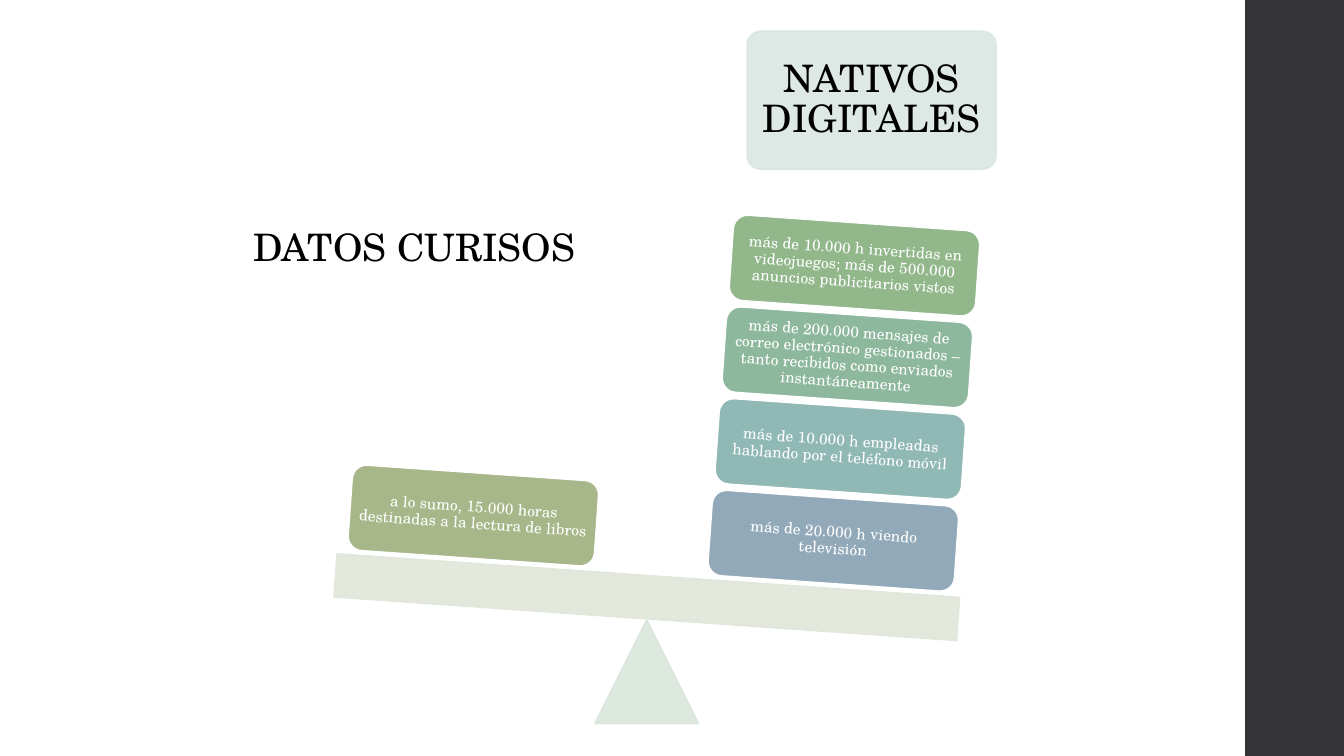
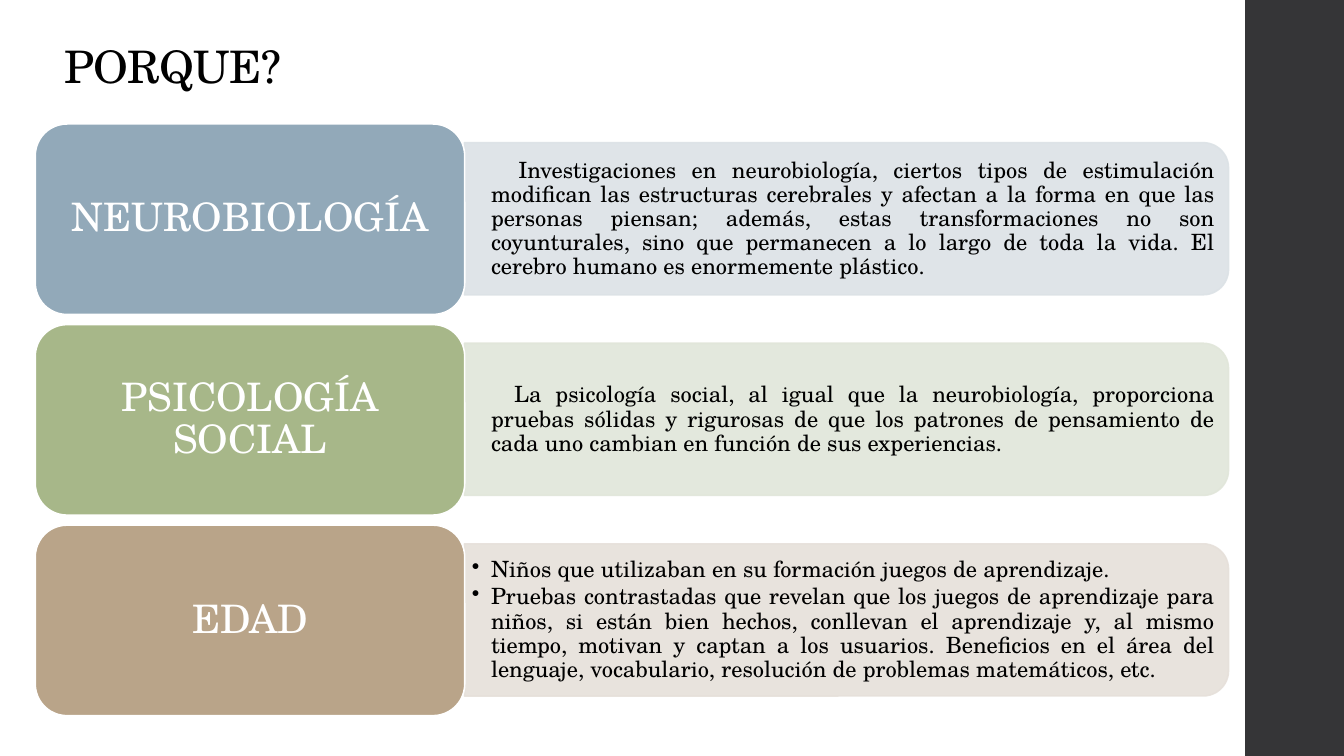
from dataclasses import dataclass
from typing import NamedTuple

from lxml import etree
from pptx import Presentation
from pptx.dml.color import RGBColor
from pptx.enum.shapes import MSO_SHAPE
from pptx.enum.text import MSO_ANCHOR, PP_ALIGN
from pptx.oxml.ns import qn
from pptx.util import Emu, Pt

RECTANGLE = MSO_SHAPE.RECTANGLE
ROUNDED = MSO_SHAPE.ROUNDED_RECTANGLE
ROUNDED_TOP = MSO_SHAPE.ROUND_2_SAME_RECTANGLE
TRIANGLE = MSO_SHAPE.ISOSCELES_TRIANGLE
CENTER, LEFT, JUSTIFY = PP_ALIGN.CENTER, PP_ALIGN.LEFT, PP_ALIGN.JUSTIFY
MIDDLE, BOTTOM = MSO_ANCHOR.MIDDLE, MSO_ANCHOR.BOTTOM

EMU_PER_PX = 9144  # 100 px to the inch
SLIDE_W, SLIDE_H = 1333, 750
BAND_LEFT = 1235
FONT = "TeX Gyre Schola"
BLACK, WHITE, BAND_COLOR = "000000", "FFFFFF", "353537"
TILT = 4
HANGING = 19


class Box(NamedTuple):
    left: int
    top: int
    width: int
    height: int


@dataclass
class TextStyle:
    size: int
    color: str = BLACK
    align: PP_ALIGN = CENTER
    anchor: MSO_ANCHOR = MIDDLE
    inset_x: int = 11
    inset_y: int = 11
    tracking: int = 0


@dataclass
class Paragraph:
    text: str
    margin: int = 0
    indent: int = 0
    bullet: str = ""


@dataclass
class Weight:
    text: str
    color: str


@dataclass
class Reason:
    name: str
    color: str
    tint: str
    details: list[Paragraph]


HEADING = TextStyle(27)
WEIGHT_TEXT = TextStyle(11, WHITE, inset_x=4, inset_y=5)
SLIDE_TITLE = TextStyle(32, align=LEFT, anchor=BOTTOM, inset_x=10, inset_y=5, tracking=-50)
REASON_NAME = TextStyle(28, WHITE, inset_x=12, inset_y=6)
REASON_DETAIL = TextStyle(16, align=JUSTIFY, inset_x=7, inset_y=3)

READING = Weight("a lo sumo, 15.000 horas destinadas a la lectura de libros", "A7B789")
DIGITAL_WEIGHTS = [
    Weight("más de 10.000 h invertidas en videojuegos; más de 500.000 anuncios "
           "publicitarios vistos", "91B78B"),
    Weight("más de 200.000 mensajes de correo electrónico gestionados –tanto "
           "recibidos como enviados instantáneamente", "8EB89E"),
    Weight("más de 10.000 h empleadas hablando por el teléfono móvil", "90B8B4"),
    Weight("más de 20.000 h viendo televisión", "92A9B9"),
]

REASONS = [
    Reason("NEUROBIOLOGÍA", "92A9B9", "DCE2E6", [
        Paragraph("Investigaciones en neurobiología, ciertos tipos de estimulación "
                  "modifican las estructuras cerebrales y afectan a la forma en que las "
                  "personas piensan; además, estas transformaciones no son coyunturales, "
                  "sino que permanecen a lo largo de toda la vida. El cerebro humano es "
                  "enormemente plástico.", HANGING, 27)]),
    Reason("PSICOLOGÍA SOCIAL", "A7B789", "E1E6DA", [
        Paragraph("La psicología social, al igual que la neurobiología, proporciona "
                  "pruebas sólidas y rigurosas de que los patrones de pensamiento de cada "
                  "uno cambian en función de sus experiencias.", HANGING, 23)]),
    Reason("EDAD", "B9A489", "E6E0DA", [
        Paragraph("Niños que utilizaban en su formación juegos de aprendizaje.",
                  HANGING, -HANGING, "•"),
        Paragraph("Pruebas contrastadas que revelan que los juegos de aprendizaje para "
                  "niños, si están bien hechos, conllevan el aprendizaje y, al mismo "
                  "tiempo, motivan y captan a los usuarios. Beneficios en el área del "
                  "lenguaje, vocabulario, resolución de problemas matemáticos, etc.",
                  HANGING, -HANGING, "•")]),
]


def px(length: int) -> Emu:
    return Emu(length * EMU_PER_PX)


def rgb(color: str) -> RGBColor:
    return RGBColor.from_string(color)


def write(shape, paragraphs: list[Paragraph], style: TextStyle) -> None:
    frame = shape.text_frame
    frame.word_wrap = True
    frame.vertical_anchor = style.anchor
    frame.margin_left = frame.margin_right = px(style.inset_x)
    frame.margin_top = frame.margin_bottom = px(style.inset_y)
    for index, content in enumerate(paragraphs):
        paragraph = frame.add_paragraph() if index else frame.paragraphs[0]
        paragraph.alignment = style.align
        paragraph.line_spacing = 0.9
        paragraph.space_after = Pt(2 if content.bullet else 0)
        properties = paragraph._p.get_or_add_pPr()
        properties.set("marL", str(px(content.margin)))
        properties.set("indent", str(px(content.indent)))
        if content.bullet:
            etree.SubElement(properties, qn("a:buChar"), char=content.bullet)
        run = paragraph.add_run()
        run.text = content.text
        run.font.name = FONT
        run.font.size = Pt(style.size)
        run.font.color.rgb = rgb(style.color)
        if style.tracking:
            run._r.get_or_add_rPr().set("spc", str(style.tracking))


def add_text(slide, box: Box, paragraphs: list[Paragraph], style: TextStyle) -> None:
    write(slide.shapes.add_textbox(*map(px, box)), paragraphs, style)


def add_block(slide, kind: MSO_SHAPE, box: Box, fill: str, line: str = "",
              opacity: int = 100, rotation: int = 0):
    block = slide.shapes.add_shape(kind, *map(px, box))
    block.shadow.inherit = False
    block.rotation = rotation
    block.fill.solid()
    block.fill.fore_color.rgb = rgb(fill)
    block.line.color.rgb = rgb(line or fill)
    block.line.width = Pt(1.1)
    if opacity < 100:
        for color in block._element.spPr.iter(qn("a:srgbClr")):
            etree.SubElement(color, qn("a:alpha"), val=str(opacity * 1000))
    return block


def add_slide(deck):
    slide = deck.slides.add_slide(deck.slide_layouts[6])
    band = add_block(slide, RECTANGLE, Box(BAND_LEFT, 0, SLIDE_W - BAND_LEFT, SLIDE_H),
                     BAND_COLOR)
    band.line.fill.background()
    return slide


def add_weight(slide, left: int, top: int, weight: Weight) -> None:
    block = add_block(slide, ROUNDED, Box(left, top, 245, 85), weight.color, WHITE,
                      rotation=TILT)
    write(block, [Paragraph(weight.text)], WEIGHT_TEXT)


def build_balance(deck) -> None:
    slide = add_slide(deck)
    # Headings above each side
    add_text(slide, Box(201, 183, 420, 129), [Paragraph("DATOS CURISOS")], HEADING)
    natives = add_block(slide, ROUNDED, Box(741, 31, 247, 137), "DBE6E3", opacity=90)
    natives.adjustments[0] = 0.1
    write(natives, [Paragraph("NATIVOS DIGITALES")], HEADING)
    # Pivot and tilted beam
    add_block(slide, TRIANGLE, Box(590, 615, 103, 103), "DAE6DB", opacity=90)
    add_block(slide, RECTANGLE, Box(332, 571, 619, 43), "E1E6DA", opacity=90, rotation=TILT)
    # Weights on both sides, the stack leaning with the beam
    for level, weight in enumerate(DIGITAL_WEIGHTS):
        add_weight(slide, 725 - 7 * level, 221 + 91 * level, weight)
    add_weight(slide, 347, 469, READING)


def build_reasons(deck) -> None:
    slide = add_slide(deck)
    add_text(slide, Box(54, 19, 236, 78), [Paragraph("PORQUE?")], SLIDE_TITLE)
    name_left, name_w, row_h, row_pitch = 35, 426, 189, 199
    panel_left, panel_w, panel_h = name_left + name_w, 758, 151
    detail_w, detail_h = 751, 137
    for row, reason in enumerate(REASONS):
        top = 123 + row * row_pitch
        middle = top + row_h // 2
        # Detail panel: an upright shape turned so its round corners face right
        upright = Box(panel_left + (panel_w - panel_h) // 2, middle - panel_w // 2,
                      panel_h, panel_w)
        add_block(slide, ROUNDED_TOP, upright, reason.tint, opacity=90, rotation=90)
        add_text(slide, Box(panel_left, middle - detail_h // 2, detail_w, detail_h),
                 reason.details, REASON_DETAIL)
        # Reason name
        label = add_block(slide, ROUNDED, Box(name_left, top, name_w, row_h),
                          reason.color, WHITE)
        write(label, [Paragraph(reason.name)], REASON_NAME)


def main() -> None:
    deck = Presentation()
    deck.slide_width, deck.slide_height = px(SLIDE_W), px(SLIDE_H)
    build_balance(deck)
    build_reasons(deck)
    deck.save("out.pptx")


if __name__ == "__main__":
    main()
